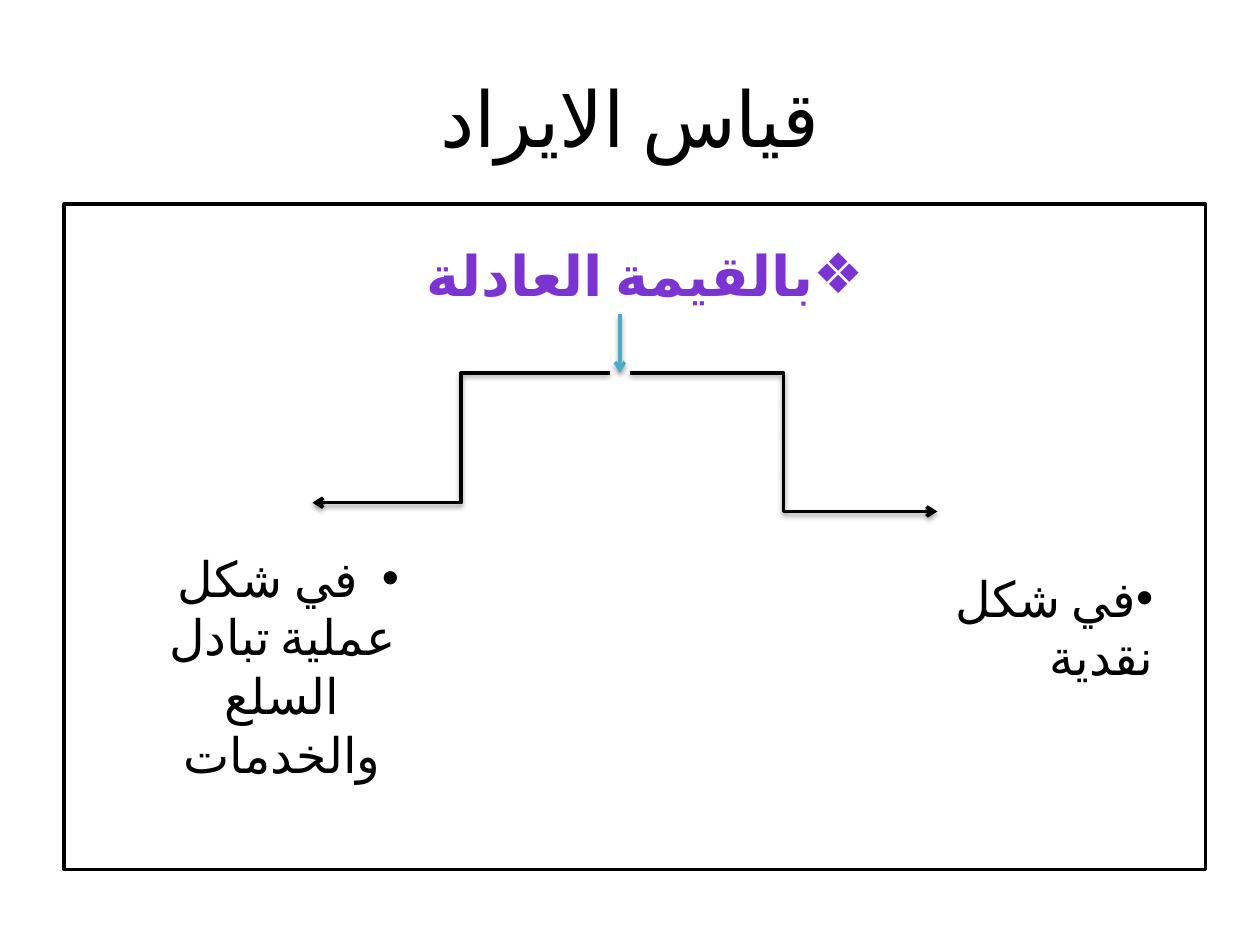
from lxml import etree
from pptx import Presentation
from pptx.dml.color import RGBColor
from pptx.enum.lang import MSO_LANGUAGE_ID
from pptx.enum.shapes import MSO_CONNECTOR, MSO_SHAPE
from pptx.enum.text import MSO_ANCHOR, MSO_AUTO_SIZE, PP_ALIGN
from pptx.oxml.ns import qn
from pptx.util import Inches, Pt

RECTANGLE = MSO_SHAPE.RECTANGLE
STRAIGHT, ELBOW = MSO_CONNECTOR.STRAIGHT, MSO_CONNECTOR.ELBOW
CENTER, RIGHT = PP_ALIGN.CENTER, PP_ALIGN.RIGHT
MIDDLE = MSO_ANCHOR.MIDDLE
GROW = MSO_AUTO_SIZE.SHAPE_TO_FIT_TEXT
ARABIC = MSO_LANGUAGE_ID.ARABIC

FONT = "Calibri"
BLACK, WHITE, TEAL, PURPLE = "000000", "FFFFFF", "4BACC6", "7B34D2"
TITLE = "قياس الايراد"
TITLE_BOX = (0.5, 0.3, 9, 1.25)
FRAME_BOX = (0.51, 1.62, 9.06, 5.28)
ARROWS = [
    (STRAIGHT, (4.92, 2.49), (4.92, 2.96), TEAL),
    (ELBOW, (5, 2.96), (7.44, 4.06), BLACK),
    (ELBOW, (4.84, 2.96), (2.48, 3.99), BLACK),
]
LABELS = [
    ("بالقيمة العادلة", (2.01, 1.86, 6.22, 0.64), "❖", CENTER, 32, PURPLE, True),
    ("في شكل نقدية", (6.97, 4.46, 2.28, 0.57), "•", RIGHT, 28, BLACK, False),
    (" في شكل عملية تبادل السلع والخدمات", (1.06, 4.3, 2.36, 1.51), "•", CENTER, 28, BLACK, False),
]


def color(value):
    return RGBColor.from_string(value)


def inches(values):
    return [Inches(value) for value in values]


def write(paragraph, text, size, text_color, bold, align):
    paragraph.alignment = align
    run = paragraph.add_run()
    run.text = text
    run.font.name = FONT
    run.font.size = Pt(size)
    run.font.bold = bold
    run.font.color.rgb = color(text_color)
    run.font.language_id = ARABIC
    etree.SubElement(run._r.get_or_add_rPr(), qn("a:cs"), typeface=FONT)


def add_arrow(slide, kind, start, end, line_color):
    connector = slide.shapes.add_connector(kind, *inches(start + end))
    connector.line.color.rgb = color(line_color)
    connector.line.width = Pt(2)
    line = connector.line._get_or_add_ln()
    etree.SubElement(line, qn("a:tailEnd"), type="arrow")
    effects = etree.SubElement(connector._element.spPr, qn("a:effectLst"))
    shadow = etree.SubElement(
        effects, qn("a:outerShdw"), blurRad=str(Pt(3.1)), dist=str(Pt(1.6)),
        dir="5400000", rotWithShape="0",
    )
    shade = etree.SubElement(shadow, qn("a:srgbClr"), val=BLACK)
    etree.SubElement(shade, qn("a:alpha"), val="38000")


def add_label(slide, text, box, bullet, align, size, text_color, bold):
    frame = slide.shapes.add_textbox(*inches(box)).text_frame
    frame.word_wrap = True
    frame.auto_size = GROW
    paragraph = frame.paragraphs[0]
    properties = paragraph._p.get_or_add_pPr()
    properties.set("rtl", "1")
    etree.SubElement(properties, qn("a:buFont"), typeface="Arial")
    etree.SubElement(properties, qn("a:buChar"), char=bullet)
    write(paragraph, text, size, text_color, bold, align)


def main():
    presentation = Presentation()
    presentation.slide_width, presentation.slide_height = Inches(10), Inches(7.5)
    slide = presentation.slides.add_slide(presentation.slide_layouts[5])

    title = slide.shapes.title
    title.left, title.top, title.width, title.height = inches(TITLE_BOX)
    title.text_frame.vertical_anchor = MIDDLE
    write(title.text_frame.paragraphs[0], TITLE, 44, BLACK, False, CENTER)

    frame = slide.shapes.add_shape(RECTANGLE, *inches(FRAME_BOX))
    frame.shadow.inherit = False
    frame.fill.solid()
    frame.fill.fore_color.rgb = color(WHITE)
    frame.line.color.rgb = color(BLACK)
    frame.line.width = Pt(2)

    for arrow in ARROWS:
        add_arrow(slide, *arrow)
    for label in LABELS:
        add_label(slide, *label)

    presentation.save("out.pptx")


if __name__ == "__main__":
    main()
